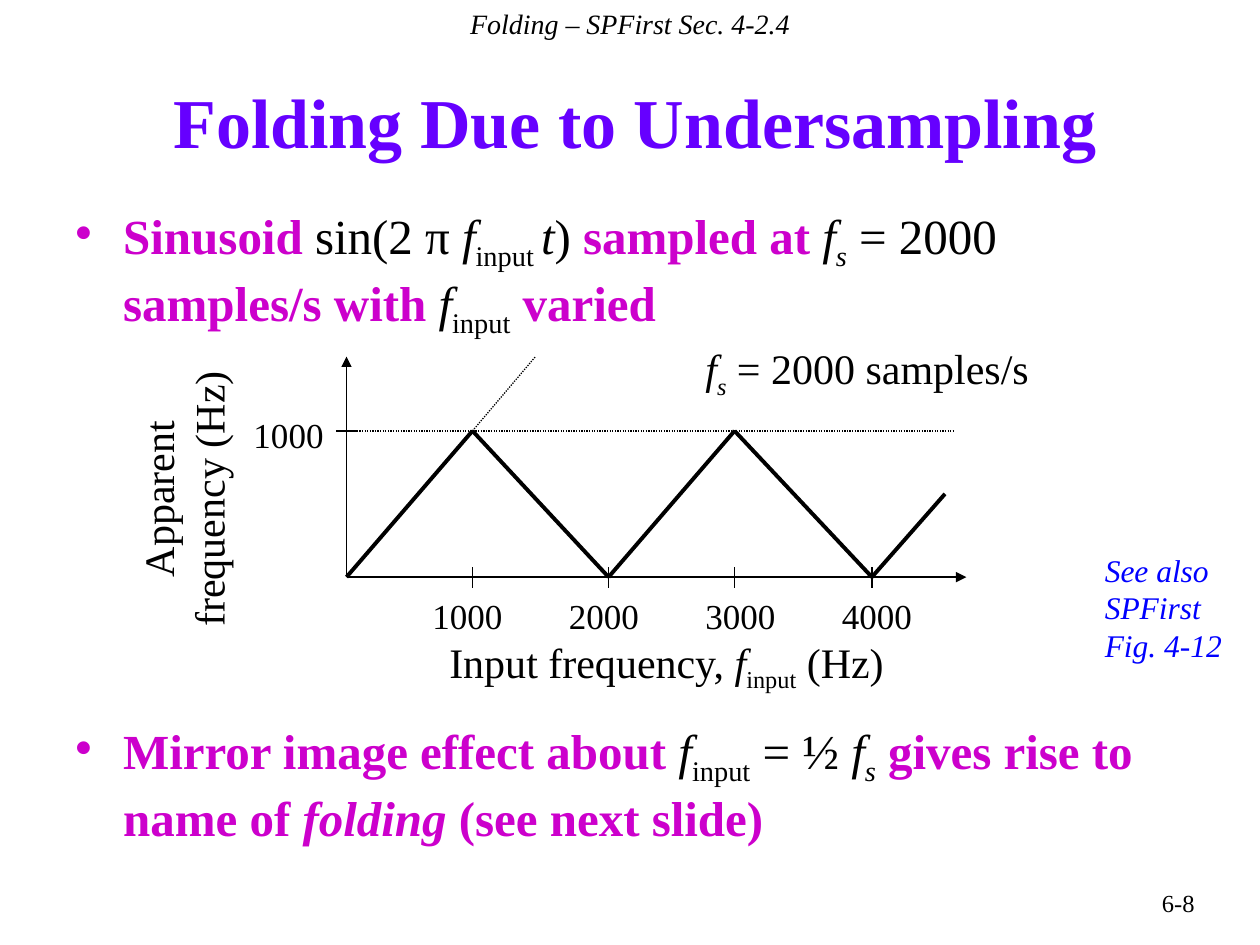
from dataclasses import dataclass
from itertools import pairwise

from lxml.etree import SubElement
from pptx import Presentation
from pptx.dml.color import RGBColor
from pptx.enum.dml import MSO_LINE
from pptx.enum.shapes import MSO_CONNECTOR
from pptx.enum.text import MSO_ANCHOR, PP_ALIGN
from pptx.oxml.ns import qn
from pptx.util import Inches, Pt


@dataclass(frozen=True)
class Theme:
    """Colours, font and type sizes of the slide."""
    font: str = "Times New Roman"
    ink: str = "000000"
    title: str = "6600FF"
    accent: str = "CC00CC"
    note: str = "0000FF"
    title_size: int = 40
    body_size: int = 28
    axis_size: int = 24
    tick_size: int = 20
    note_size: int = 18
    header_size: int = 16
    number_size: int = 14
    thin: float = 0.75
    thick: float = 2.25


THEME = Theme()
LEFT, CENTER, RIGHT = PP_ALIGN.LEFT, PP_ALIGN.CENTER, PP_ALIGN.RIGHT
AXIS_X, AXIS_Y, PEAK_Y, TOP_Y = 2.75, 4.58, 3.42, 2.83
TICKS = {"1000": 3.75, "2000": 4.83, "3000": 5.83, "4000": 6.92}
LABEL_WIDTH, LABEL_HEIGHT = 1.08, 0.43


def add_span(para, text, style, size, color):
    """Add one run; style letters: a accent, b bold, i italic, s subscript."""
    span = para.add_run()
    span.text = text
    font = span.font
    font.name, font.size = THEME.font, Pt(size)
    font.bold, font.italic = "b" in style, "i" in style
    font.color.rgb = RGBColor.from_string(THEME.accent if "a" in style else color)
    if "s" in style:
        span._r.get_or_add_rPr().set("baseline", "-25000")


def add_text(page, area, spans, size, color=THEME.ink, align=CENTER):
    """Add a wrapped text box; a None span breaks the line."""
    box = page.shapes.add_textbox(*map(Inches, area))
    box.text_frame.word_wrap = True
    para = box.text_frame.paragraphs[0]
    para.alignment = align
    for span in spans:
        if span is None:
            para.add_line_break()
        else:
            add_span(para, *span, size, color)
    return box


def add_bullet(page, area, spans):
    """Add a body text box with a hanging bullet."""
    box = add_text(page, area, spans, THEME.body_size, align=LEFT)
    props = box.text_frame.paragraphs[0]._p.get_or_add_pPr()
    props.set("marL", str(Inches(0.38)))
    props.set("indent", str(Inches(-0.38)))
    color = SubElement(props, qn("a:buClr"))
    SubElement(color, qn("a:srgbClr"), val=THEME.accent)
    SubElement(props, qn("a:buChar"), char="•")


def add_line(page, start, end, width=THEME.thin, dotted=False, arrow=False):
    """Add a straight line, dotted or with an arrowhead at its end if asked."""
    line = page.shapes.add_connector(
        MSO_CONNECTOR.STRAIGHT, *map(Inches, (*start, *end)))
    line.line.width = Pt(width)
    line.line.color.rgb = RGBColor.from_string(THEME.ink)
    if dotted:
        line.line.dash_style = MSO_LINE.ROUND_DOT
    if arrow:
        SubElement(line.line._get_or_add_ln(), qn("a:tailEnd"), type="triangle")
    SubElement(line._element.spPr, qn("a:effectLst"))


def add_axes(page):
    """Draw the axes, ticks and tick labels."""
    origin = (AXIS_X, AXIS_Y)
    add_line(page, origin, (AXIS_X, TOP_Y), arrow=True)
    add_line(page, origin, (7.67, AXIS_Y), arrow=True)
    add_line(page, (2.67, PEAK_Y), (2.83, PEAK_Y))
    add_text(page, (1.75, 3.23, LABEL_WIDTH, LABEL_HEIGHT), [("1000", "")],
             THEME.tick_size)
    for index, (label, x) in enumerate(TICKS.items()):
        add_line(page, (x, 4.5), (x, 4.67))
        left = 3.17 + index * 3.25 / 3
        add_text(page, (left, 4.67, LABEL_WIDTH, LABEL_HEIGHT), [(label, "")],
                 THEME.tick_size)


def add_folding_curve(page):
    """Draw the zigzag of apparent frequency and its dotted guides."""
    turns = [(x, AXIS_Y if index % 2 else PEAK_Y)
             for index, x in enumerate(TICKS.values())]
    points = [(AXIS_X, AXIS_Y), *turns, (7.5, 3.92)]
    for start, end in pairwise(points):
        add_line(page, start, end, THEME.thick)
    add_line(page, (AXIS_X, PEAK_Y), (7.58, PEAK_Y), dotted=True)
    add_line(page, turns[0], (4.25, TOP_Y), dotted=True)


def add_plot_titles(page):
    """Add the axis titles and the sampling rate."""
    label = add_text(page, (0.24, 3.51, 2.42, 0.9),
                     [("Apparent", ""), None, ("frequency (Hz)", "")],
                     THEME.axis_size)
    label.rotation = 270
    add_text(page, (3, 5, 4.58, 0.5),
             [("Input frequency, ", ""), ("f", "i"), ("input", "s"), (" (Hz)", "")],
             THEME.axis_size)
    add_text(page, (5.5, 2.67, 2.83, 0.5),
             [("f", "i"), ("s", "is"), (" = 2000 samples/s", "")],
             THEME.axis_size, align=LEFT)


def main():
    """Build and save the slide."""
    deck = Presentation()
    deck.slide_width, deck.slide_height = Inches(10), Inches(7.5)
    page = deck.slides.add_slide(deck.slide_layouts[6])

    title = add_text(page, (0.5, 0.33, 9.08, 1.25),
                     [("Folding Due to Undersampling", "b")],
                     THEME.title_size, THEME.title)
    title.text_frame.vertical_anchor = MSO_ANCHOR.MIDDLE
    add_bullet(page, (0.5, 1.58, 8.67, 1.08), [
        ("Sinusoid ", "ab"), ("sin(2 π ", ""), ("f", "i"), ("input ", "s"),
        ("t", "i"), (")", ""), (" sampled at ", "ab"), ("f", "i"), ("s", "is"),
        (" = 2000", ""), (" samples/s with ", "ab"), ("f", "i"), ("input", "s"),
        (" varied", "ab")])
    add_plot_titles(page)
    add_axes(page)
    add_folding_curve(page)
    add_text(page, (7.5, 7, 2.08, 0.5), [("6-8", "")], THEME.number_size,
             align=RIGHT)
    add_text(page, (8.67, 4.32, 1.33, 1.01),
             [("See also", "i"), None, ("SPFirst Fig. 4-12", "i")],
             THEME.note_size, THEME.note, LEFT)
    add_text(page, (0, 0, 10, 0.37), [("Folding – SPFirst Sec. 4-2.4", "i")],
             THEME.header_size)
    add_bullet(page, (0.5, 5.67, 8.67, 1.33), [
        ("Mirror image effect about ", "ab"), ("f", "i"), ("input", "s"),
        (" = ½ ", ""), ("f", "i"), ("s", "is"),
        (" gives rise to name of ", "ab"), ("folding ", "abi"),
        ("(see next slide)", "ab")])

    deck.save("out.pptx")


if __name__ == "__main__":
    main()
